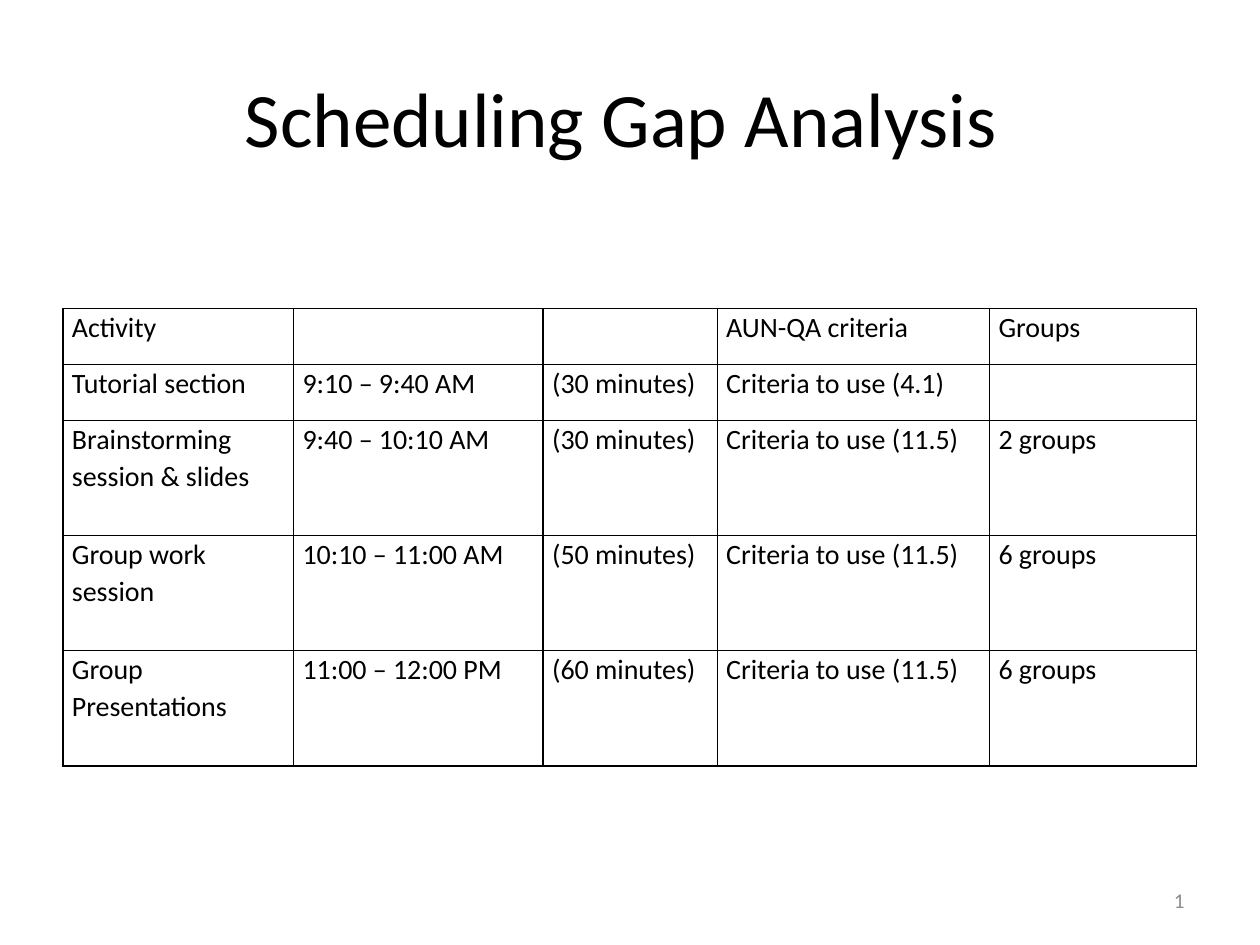
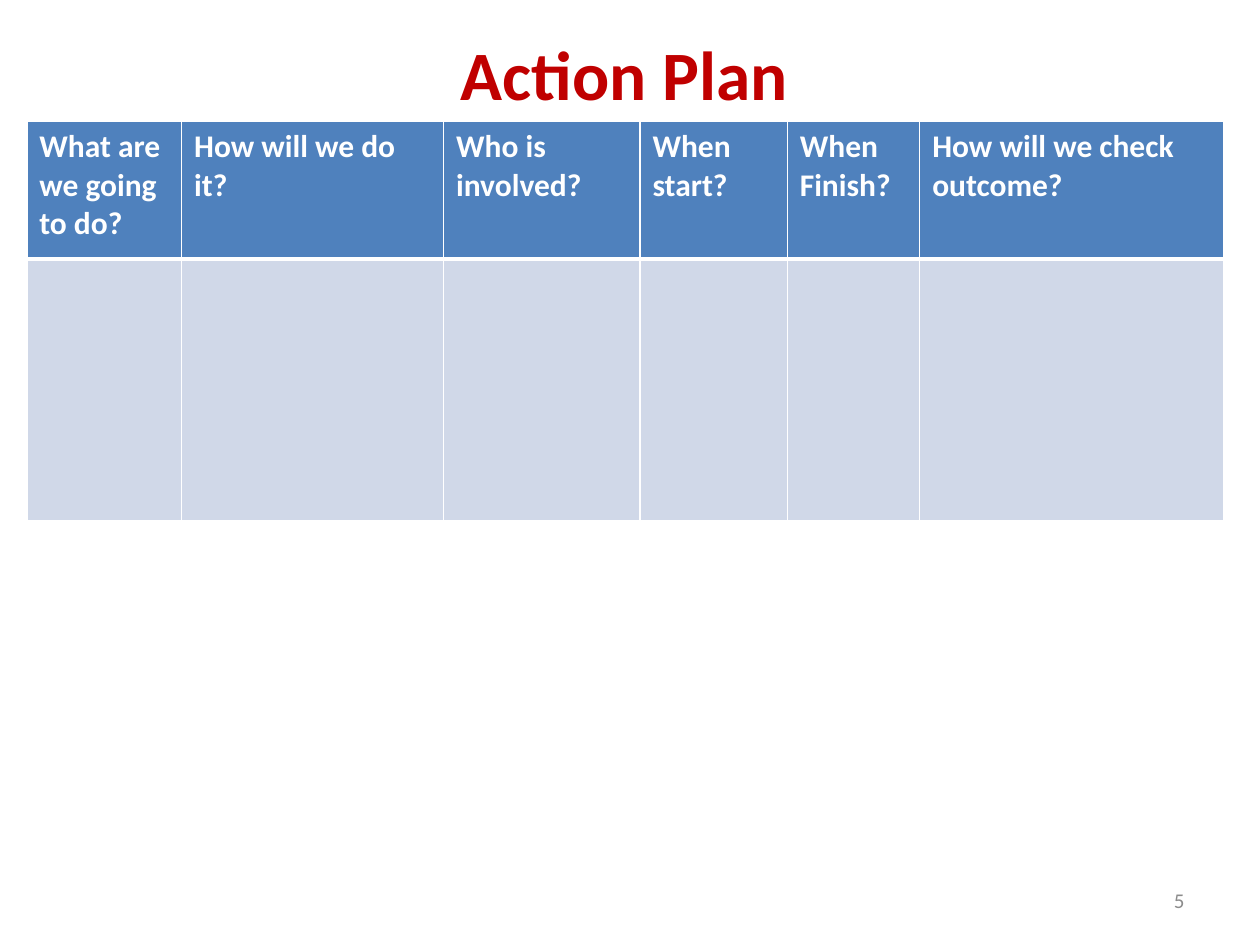
from lxml.etree import SubElement
from pptx import Presentation
from pptx.dml.color import RGBColor
from pptx.enum.text import MSO_ANCHOR as Anchor, PP_ALIGN as Align
from pptx.oxml.ns import qn
from pptx.util import Cm, Pt

FONT = "Calibri"
BLACK = RGBColor(0x00, 0x00, 0x00)
WHITE = RGBColor(0xFF, 0xFF, 0xFF)
GREY = RGBColor(0x8C, 0x8C, 0x8C)
RED = RGBColor(0xC0, 0x00, 0x00)
BLUE = RGBColor(0x4F, 0x81, 0xBD)
PALE_BLUE = RGBColor(0xD0, 0xD8, 0xE8)

SCHEDULE = [
    ["Activity", "", "", "AUN-QA criteria", "Groups"],
    ["Tutorial section", "9:10 – 9:40 AM", "(30 minutes)", "Criteria to use (4.1)", ""],
    ["Brainstorming session & slides", "9:40 – 10:10 AM", "(30 minutes)",
     "Criteria to use (11.5)", "2 groups"],
    ["Group work session", "10:10 – 11:00 AM", "(50 minutes)",
     "Criteria to use (11.5)", "6 groups"],
    ["Group Presentations", "11:00 – 12:00 PM", "(60 minutes)",
     "Criteria to use (11.5)", "6 groups"],
]
PLAN_QUESTIONS = ["What are we going to do?", "How will we do it?", "Who is involved?",
                  "When start?", "When Finish?", "How will we check outcome?"]


def add_run(paragraph, text, size, color, bold=False):
    run = paragraph.add_run()
    run.text = text
    run.font.name = FONT
    run.font.size = Pt(size)
    run.font.bold = bold
    run.font.color.rgb = color


def add_line(slide, box, text, size, color, align, bold=False):
    """Add one vertically centred line of text in a box given in cm."""
    frame = slide.shapes.add_textbox(*map(Cm, box)).text_frame
    frame.word_wrap = True
    frame.vertical_anchor = Anchor.MIDDLE
    paragraph = frame.paragraphs[0]
    paragraph.alignment = align
    add_run(paragraph, text, size, color, bold)


def add_page_number(slide, number):
    add_line(slide, (18.2, 17.65, 5.93, 1.01), number, 12, GREY, Align.RIGHT)


def add_grid(slide, left, top, widths, heights):
    """Add an unstyled table whose size follows from its columns and rows."""
    table = slide.shapes.add_table(
        len(heights), len(widths), Cm(left), Cm(top),
        Cm(sum(widths)), Cm(sum(heights))).table
    table.first_row = table.horz_banding = False
    for column, width in zip(table.columns, widths):
        column.width = Cm(width)
    for row, height in zip(table.rows, heights):
        row.height = Cm(height)
    return table


def style_cell(cell, fill, border, top=1, bottom=1):
    """Set the fill and the four borders; top and bottom are widths in points."""
    properties = cell._tc.get_or_add_tcPr()
    for side, width in (("L", 1), ("R", 1), ("T", top), ("B", bottom)):
        line = SubElement(properties, qn(f"a:ln{side}"), w=str(Pt(width)))
        paint = SubElement(line, qn("a:solidFill"))
        SubElement(paint, qn("a:srgbClr"), val=str(border))
    cell.fill.solid()
    cell.fill.fore_color.rgb = fill


def add_schedule_table(slide, left, top):
    table = add_grid(slide, left, top, [4.65, 5.03, 3.51, 5.49, 4.17],
                     [1.13] * 2 + [2.32] * 3)
    for r, activity in enumerate(SCHEDULE):
        for c, text in enumerate(activity):
            cell = table.cell(r, c)
            style_cell(cell, WHITE, BLACK)
            cell.margin_left = cell.margin_right = Cm(0.18)
            cell.margin_top = cell.margin_bottom = 0
            if text:
                paragraph = cell.text_frame.paragraphs[0]
                paragraph.line_spacing = 1.07
                add_run(paragraph, text, 16, BLACK)


def add_plan_table(slide, left, top):
    table = add_grid(slide, left, top, [3.12, 5.28, 3.96, 2.97, 2.67, 6.12], [2.77, 5.28])
    for c, question in enumerate(PLAN_QUESTIONS):
        heading, answer = table.cell(0, c), table.cell(1, c)
        style_cell(heading, BLUE, WHITE, bottom=3)
        style_cell(answer, PALE_BLUE, WHITE, top=3)
        add_run(heading.text_frame.paragraphs[0], question, 18, WHITE, bold=True)


def build_schedule_slide(slide):
    add_line(slide, (1.27, 0.76, 22.86, 3.18), "Scheduling Gap Analysis ", 44, BLACK,
             Align.CENTER)
    add_schedule_table(slide, 1.27, 6.22)
    add_page_number(slide, "1")


def build_plan_slide(slide):
    add_line(slide, (4.01, 0.58, 17.15, 1.78), "Action Plan", 39.6, RED, Align.CENTER,
             bold=True)
    add_plan_table(slide, 0.54, 2.45)
    add_page_number(slide, "5")


def main():
    deck = Presentation()
    deck.slide_width, deck.slide_height = Cm(25.4), Cm(19.05)
    blank = deck.slide_layouts[6]
    for build in (build_schedule_slide, build_plan_slide):
        build(deck.slides.add_slide(blank))
    deck.save("out.pptx")


if __name__ == "__main__":
    main()
